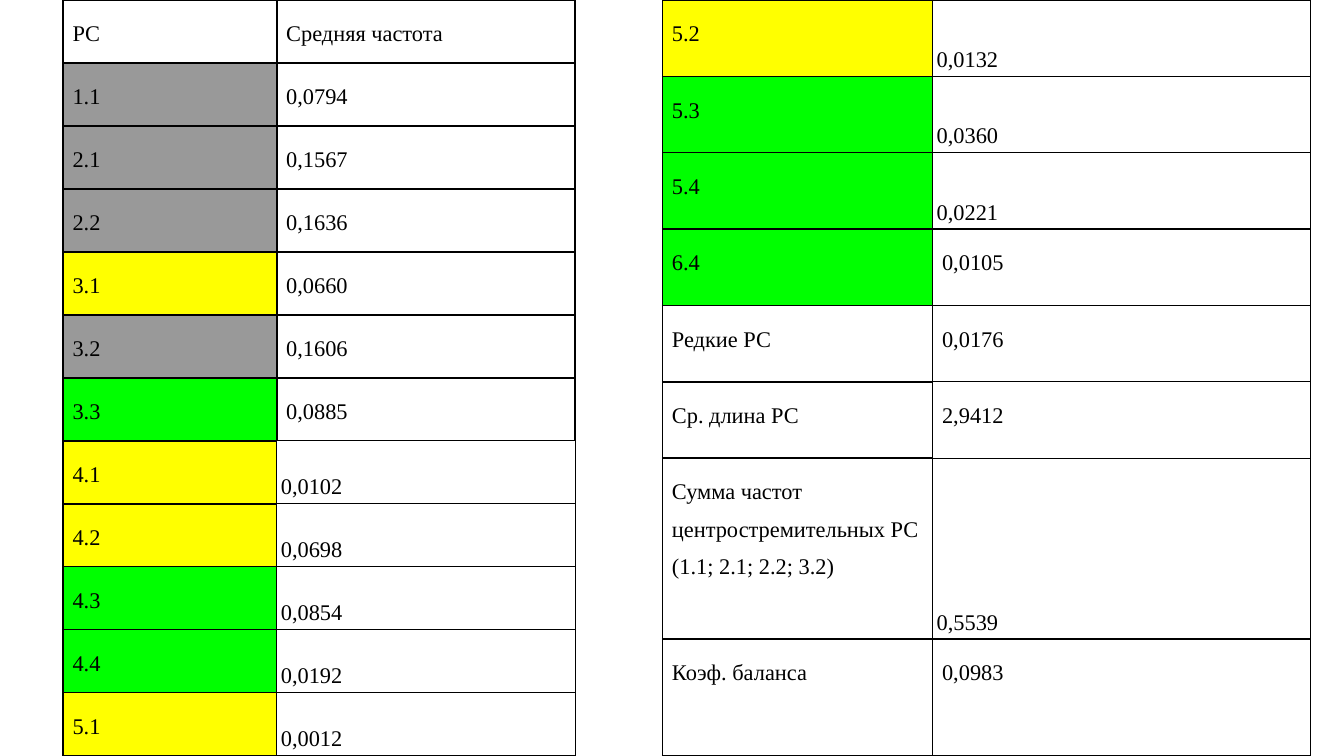
import pptx
import pptx.dml.color
import pptx.enum.text
import pptx.oxml
import pptx.oxml.ns
import pptx.util

RGBColor = pptx.dml.color.RGBColor
ALIGN = pptx.enum.text.PP_ALIGN
ANCHOR = pptx.enum.text.MSO_ANCHOR
Inches, Pt = pptx.util.Inches, pptx.util.Pt

BLACK = RGBColor(0x00, 0x00, 0x00)
GRAY = RGBColor(0x99, 0x99, 0x99)
YELLOW = RGBColor(0xFF, 0xFF, 0x00)
GREEN = RGBColor(0x00, 0xFF, 0x00)

SLIDE_W = 10
SLIDE_H = SLIDE_W * 9 / 16
FONT = {"name": "Times New Roman", "size": Pt(12), "bold": False}
SIDES = "LRTB"
LINE, THIN_LINE = Pt(1), Pt(0.75)

# Content: label, label fill, value, thin sides of the value cell.
# A value with four thin sides sits at the bottom of its cell.
FREQUENCIES = [
    ("РС", None, "Средняя частота", ""),
    ("1.1", GRAY, "0,0794", ""),
    ("2.1", GRAY, "0,1567", ""),
    ("2.2", GRAY, "0,1636", ""),
    ("3.1", YELLOW, "0,0660", ""),
    ("3.2", GRAY, "0,1606", ""),
    ("3.3", GREEN, "0,0885", "B"),
    ("4.1", YELLOW, "0,0102", SIDES),
    ("4.2", YELLOW, "0,0698", SIDES),
    ("4.3", GREEN, "0,0854", SIDES),
    ("4.4", GREEN, "0,0192", SIDES),
    ("5.1", YELLOW, "0,0012", SIDES),
]
SUM_LABEL = "Сумма частот центростремительных РС (1.1; 2.1; 2.2; 3.2)"
SUMMARY = [
    ("5.2", YELLOW, "0,0132", SIDES),
    ("5.3", GREEN, "0,0360", SIDES),
    ("5.4", GREEN, "0,0221", SIDES),
    ("6.4", GREEN, "0,0105", "TB"),
    ("Редкие РС", None, "0,0176", "TB"),
    ("Ср. длина РС", None, "2,9412", "TB"),
    (SUM_LABEL, None, "0,5539", SIDES),
    ("Коэф. баланса", None, "0,0983", "T"),
]

# Layout: left edge, column widths, relative row heights, rows
TABLES = [
    (0.47, (1.59, 2.22), [1] * len(FREQUENCIES), FREQUENCIES),
    (4.93, (2.01, 2.81), [0.57] * 6 + [1.35, 0.87], SUMMARY),
]


def draw_borders(cell, thin_sides):
    properties = cell._tc.get_or_add_tcPr()
    for side in SIDES:
        width = THIN_LINE if side in thin_sides else LINE
        properties.append(pptx.oxml.parse_xml(
            f'<a:ln{side} {pptx.oxml.ns.nsdecls("a")} w="{width}">'
            f'<a:solidFill><a:srgbClr val="{BLACK}"/></a:solidFill>'
            f'</a:ln{side}>'))


def fill_cell(cell, text, fill, thin_sides, at_bottom=False,
              align=ALIGN.JUSTIFY, spacing=1.5):
    draw_borders(cell, thin_sides)
    if fill is None:
        cell.fill.background()
    else:
        cell.fill.solid()
        cell.fill.fore_color.rgb = fill

    inset = Inches(0.03 if at_bottom else 0.07)
    for side in ("left", "right", "top", "bottom"):
        setattr(cell, f"margin_{side}", inset)
    cell.vertical_anchor = ANCHOR.BOTTOM if at_bottom else ANCHOR.TOP

    paragraph = cell.text_frame.paragraphs[0]
    paragraph.alignment = align
    paragraph.line_spacing = spacing
    run = paragraph.add_run()
    run.text = text
    for attribute, value in FONT.items():
        setattr(run.font, attribute, value)
    run.font.color.rgb = BLACK


def add_frequency_table(slide, left, widths, shares, rows):
    table = slide.shapes.add_table(
        len(rows), len(widths), Inches(left), 0,
        Inches(sum(widths)), Inches(SLIDE_H)).table
    table.first_row = table.horz_banding = False
    for column, width in zip(table.columns, widths):
        column.width = Inches(width)
    for row, share in zip(table.rows, shares):
        row.height = Inches(SLIDE_H * share / sum(shares))

    for index, (label, fill, value, thin_sides) in enumerate(rows):
        at_bottom = thin_sides == SIDES
        is_sum = label == SUM_LABEL
        fill_cell(table.cell(index, 0), label, fill, "R" if at_bottom else "",
                  align=ALIGN.LEFT if is_sum else ALIGN.JUSTIFY)
        fill_cell(table.cell(index, 1), value, None, thin_sides, at_bottom,
                  spacing=1.15 if is_sum else 1.5)


def main():
    presentation = pptx.Presentation()
    presentation.slide_width = Inches(SLIDE_W)
    presentation.slide_height = Inches(SLIDE_H)
    slide = presentation.slides.add_slide(presentation.slide_layouts[6])
    for layout in TABLES:
        add_frequency_table(slide, *layout)
    presentation.save("out.pptx")


if __name__ == "__main__":
    main()
